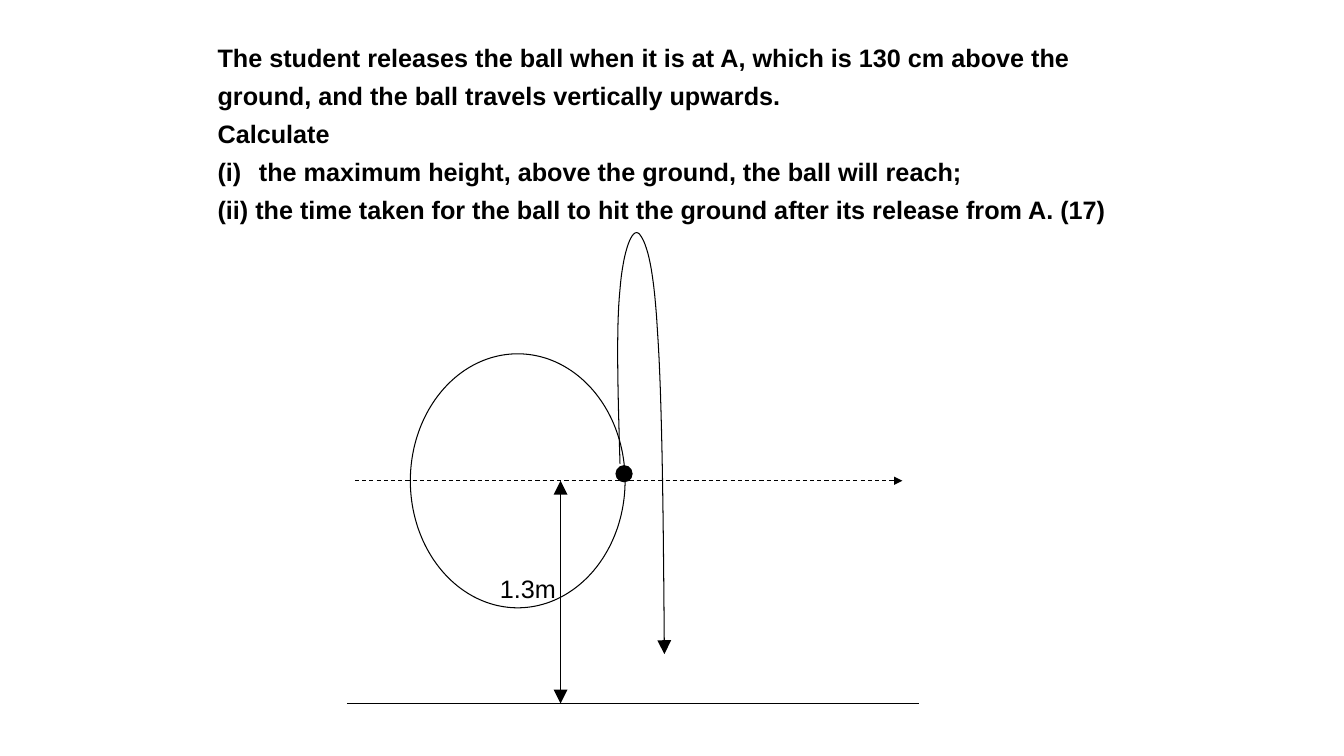
import dataclasses

import pptx
import pptx.dml.color
import pptx.enum.dml
import pptx.enum.shapes
import pptx.enum.text
import pptx.oxml.ns
import pptx.util
from lxml import etree

Inches = pptx.util.Inches
Point = tuple[float, float]
BLACK = "000000"
FONT = "Arial"
CENTRE_Y, GROUND_Y, HEIGHT_X = 4.77, 6.98, 5.56
HANGING = 0.41

QUESTION = [
    "The student releases the ball when it is at A, which is 130 cm above the",
    "ground, and the ball travels vertically upwards.",
    "Calculate",
    "the maximum height, above the ground, the ball will reach;",
    "(ii) the time taken for the ball to hit the ground after its release from A. (17)",
]
NUMBERED_LINE = 3

# Cubic curve of the ball: a start, then two handles and an end per segment
BALL_START = (6.15, 4.6)
BALL_CURVES = [
    ((6.13, 3.93), (6.11, 3.25), (6.15, 2.87)),
    ((6.18, 2.49), (6.27, 2.25), (6.34, 2.32)),
    ((6.4, 2.39), (6.48, 2.57), (6.52, 3.26)),
    ((6.57, 3.96), (6.58, 5.23), (6.59, 6.49)),
]
STEPS = 16


@dataclasses.dataclass
class Oval:
    left: float
    top: float
    width: float
    height: float
    fill: str | None = None


@dataclasses.dataclass
class Line:
    start: Point
    end: Point
    arrows: tuple[str, ...] = ()
    arrow_size: str = "med"
    dashed: bool = False


OVALS = [
    Oval(4.07, 3.51, 2.13, 2.52),
    Oval(6.11, 4.62, 0.16, 0.16, BLACK),
]
LINES = [
    Line((3.44, GROUND_Y), (9.11, GROUND_Y)),
    Line((3.52, CENTRE_Y), (8.95, CENTRE_Y), ("tailEnd",), dashed=True),
    Line((HEIGHT_X, CENTRE_Y), (HEIGHT_X, GROUND_Y), ("headEnd", "tailEnd"), "lg"),
]


def colour(value: str) -> pptx.dml.color.RGBColor:
    return pptx.dml.color.RGBColor.from_string(value)


def style_line(
    shape, arrows: tuple[str, ...] = (), arrow_size: str = "med", dashed: bool = False
) -> None:
    shape.line.color.rgb = colour(BLACK)
    shape.line.width = pptx.util.Pt(0.75)
    if dashed:
        shape.line.dash_style = pptx.enum.dml.MSO_LINE.DASH
    outline = shape.line._get_or_add_ln()
    for end in arrows:
        tag = pptx.oxml.ns.qn(f"a:{end}")
        etree.SubElement(outline, tag, type="triangle", w=arrow_size, len=arrow_size)


def draw_oval(slide, oval: Oval) -> None:
    shape = slide.shapes.add_shape(
        pptx.enum.shapes.MSO_SHAPE.OVAL,
        Inches(oval.left), Inches(oval.top), Inches(oval.width), Inches(oval.height),
    )
    shape.shadow.inherit = False
    if oval.fill:
        shape.fill.solid()
        shape.fill.fore_color.rgb = colour(oval.fill)
    else:
        shape.fill.background()
    style_line(shape)


def draw_line(slide, line: Line) -> None:
    connector = slide.shapes.add_connector(
        pptx.enum.shapes.MSO_CONNECTOR.STRAIGHT,
        *(Inches(value) for value in line.start + line.end),
    )
    style_line(connector, line.arrows, line.arrow_size, line.dashed)
    etree.SubElement(connector._element.spPr, pptx.oxml.ns.qn("a:effectLst"))


def curve_points() -> list[tuple[int, int]]:
    points, start = [], BALL_START
    for first, second, end in BALL_CURVES:
        for step in range(1, STEPS + 1):
            t = step / STEPS
            u = 1 - t
            points.append(tuple(
                Inches(u**3 * a + 3 * u * u * t * b + 3 * u * t * t * c + t**3 * d)
                for a, b, c, d in zip(start, first, second, end)
            ))
        start = end
    return points


def draw_ball_path(slide) -> None:
    builder = slide.shapes.build_freeform(*(Inches(value) for value in BALL_START))
    builder.add_line_segments(curve_points(), close=False)
    shape = builder.convert_to_shape()
    shape.shadow.inherit = False
    shape.fill.background()
    style_line(shape, ("tailEnd",), "lg")


def add_text(slide, place: tuple[float, ...], lines: list[str], bold: bool = False):
    box = slide.shapes.add_textbox(*(Inches(value) for value in place))
    frame = box.text_frame
    frame.word_wrap = True
    frame.auto_size = pptx.enum.text.MSO_AUTO_SIZE.SHAPE_TO_FIT_TEXT
    frame.text = "\n".join(lines)
    for para in frame.paragraphs:
        for span in para.runs:
            span.font.name = FONT
            span.font.size = pptx.util.Pt(18)
            span.font.bold = bold
            span.font.color.rgb = colour(BLACK)
    return frame


def add_question(slide) -> None:
    frame = add_text(slide, (2.06, 0.3, 9.61, 1.98), QUESTION, bold=True)
    for index, para in enumerate(frame.paragraphs):
        para.line_spacing = 1.25
        properties = para._p.get_or_add_pPr()
        properties.set("marL", str(Inches(HANGING)))
        properties.set("indent", str(-Inches(HANGING)))
        if index == NUMBERED_LINE:
            tag = pptx.oxml.ns.qn("a:buAutoNum")
            etree.SubElement(properties, tag, type="romanLcParenBoth")


def main() -> None:
    deck = pptx.Presentation()
    deck.slide_width, deck.slide_height = Inches(13.33), Inches(7.5)
    page = deck.slides.add_slide(deck.slide_layouts[6])

    # Question
    add_question(page)

    # Circle, ball, ground and measuring lines
    for oval in OVALS:
        draw_oval(page, oval)
    for line in LINES:
        draw_line(page, line)
    draw_ball_path(page)

    # Height label
    add_text(page, (4.86, 5.64, 0.94, 0.4), ["1.3m"])

    deck.save("out.pptx")


if __name__ == "__main__":
    main()
